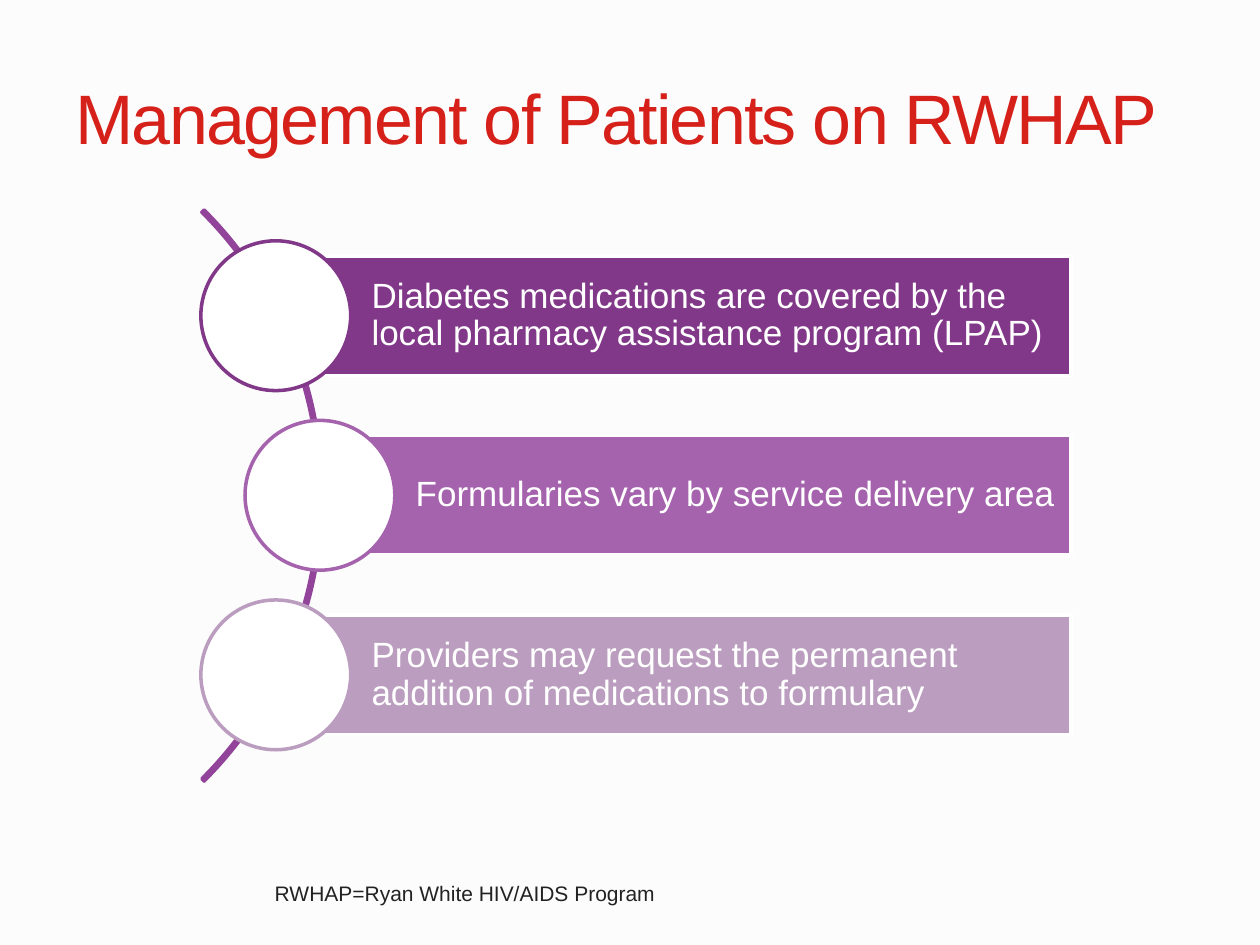
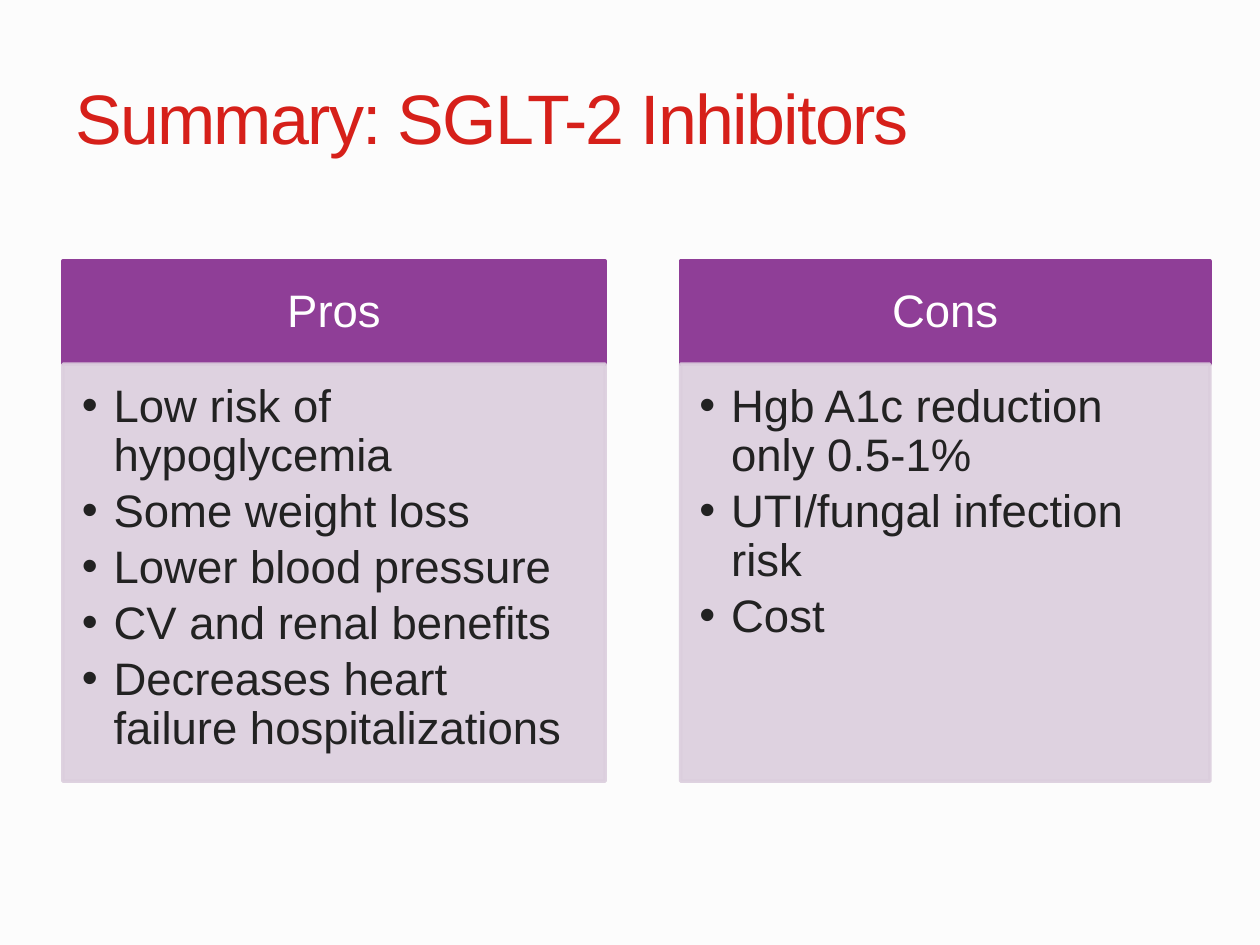
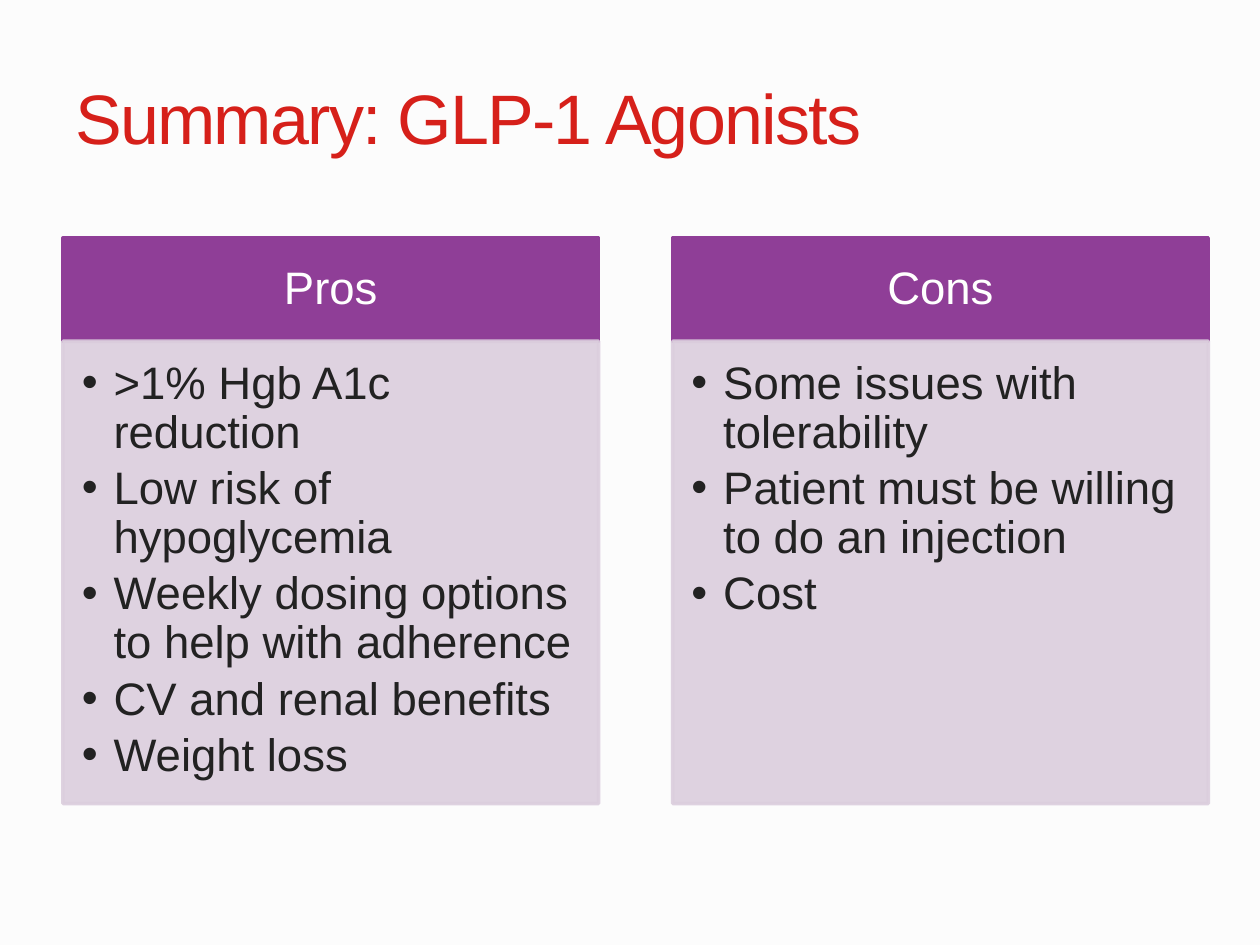
from lxml import etree
from pptx import Presentation
from pptx.dml.color import RGBColor
from pptx.enum.shapes import MSO_SHAPE as Shape
from pptx.enum.text import MSO_ANCHOR as Anchor, PP_ALIGN as Align
from pptx.oxml.ns import qn
from pptx.util import Cm, Pt

FONT = "Arial"
WHITE, INK, RED, PAPER = "FFFFFF", "222222", "D6201A", "FCFCFC"
PURPLE, LILAC = "8F3E97", "DBCEDD"
HEADER_HEIGHT = 2.08


def rgb(value):
    return RGBColor.from_string(value)


def apply(target, values):
    for name, value in values.items():
        setattr(target, name, value)


def add_alpha(element, percent):
    for color in element.iter(qn("a:srgbClr")):
        etree.SubElement(color, qn("a:alpha"), val=str(percent * 1000))


class SlideBuilder:
    def __init__(self):
        self.deck = Presentation()
        self.deck.slide_width, self.deck.slide_height = Cm(25.4), Cm(19.05)
        self.page = None

    def start_page(self, title):
        self.page = self.deck.slides.add_slide(self.deck.slide_layouts[6])
        background = self.page.background.fill
        background.solid()
        background.fore_color.rgb = rgb(PAPER)
        box = self.text_box((1.27, 0.76, 23.09, 3.18), [title], 40, RED,
                            anchor=Anchor.MIDDLE)
        span = box.text_frame.paragraphs[0].runs[0]
        span.font._element.set("spc", "-100")

    def shape(self, kind, place, line, fill=None, alpha=None):
        shape = self.page.shapes.add_shape(kind, *map(Cm, place))
        shape.shadow.inherit = False
        if fill:
            shape.fill.solid()
            shape.fill.fore_color.rgb = rgb(fill)
        else:
            shape.fill.background()
        shape.line.color.rgb = rgb(line)
        shape.line.width = Pt(2)
        if alpha:
            add_alpha(shape._element.spPr, alpha)
        return shape

    def text_box(self, place, lines, size, color, **style):
        box = self.page.shapes.add_textbox(*map(Cm, place))
        self.fill_text(box, lines, size, color, **style)
        return box

    def fill_text(self, box, lines, size, color, insets=(0.25, 0.13, 0.25, 0.13),
                  anchor=Anchor.TOP, align=Align.LEFT, spacing=1.0, bullet=False):
        frame = box.text_frame
        sides = ("margin_left", "margin_top", "margin_right", "margin_bottom")
        apply(frame, dict(zip(sides, map(Cm, insets))))
        apply(frame, {"word_wrap": True, "vertical_anchor": anchor})
        for index, line in enumerate(lines):
            para = frame.add_paragraph() if index else frame.paragraphs[0]
            apply(para, {"alignment": align, "line_spacing": spacing})
            if bullet:
                self.add_bullet(para)
            span = para.add_run()
            span.text = line
            apply(span.font, {"name": FONT, "size": Pt(size)})
            span.font.color.rgb = rgb(color)

    def add_bullet(self, para):
        para.space_after = Pt(4)
        properties = para._p.get_or_add_pPr()
        properties.set("marL", str(Cm(0.64)))
        properties.set("indent", str(-Cm(0.64)))
        etree.SubElement(properties, qn("a:buFont"), typeface=FONT)
        etree.SubElement(properties, qn("a:buChar"), char="•")

    def arc(self, place, start, end, thickness):
        arc = self.shape(Shape.BLOCK_ARC, place, "914499")
        for index, value in enumerate((start, end, thickness)):
            arc.adjustments[index] = value

    def circle_bar(self, left, top, text, color):
        right, height, diameter = 21.59, 2.41, 3.02
        bar = self.shape(Shape.RECTANGLE, (left, top, right - left, height), WHITE, color)
        self.fill_text(bar, [text], 20, WHITE, (1.93, 0.15, 0.15, 0.15),
                       Anchor.MIDDLE, spacing=0.9)
        circle_top = top + (height - diameter) / 2
        self.shape(Shape.OVAL, (left - diameter / 2, circle_top, diameter, diameter),
                   color, WHITE)

    def list_column(self, left, top, width, body_height, heading, items):
        header = self.shape(Shape.RECTANGLE, (left, top, width, HEADER_HEIGHT),
                            PURPLE, PURPLE)
        self.fill_text(header, [heading], 26, WHITE, (0.5, 0.3, 0.5, 0.3),
                       Anchor.MIDDLE, Align.CENTER, 0.9)
        body = self.shape(Shape.RECTANGLE, (left, top + HEADER_HEIGHT, width, body_height),
                          LILAC, LILAC, alpha=90)
        self.fill_text(body, items, 26, INK, (0.38, 0.38, 0.5, 0.58),
                       spacing=0.9, bullet=True)


def build_management(builder):
    builder.start_page("Management of Patients on RWHAP")
    builder.arc((-9.78, 1.85, 16.28, 16.28), 189, 27, 0.004)
    bars = [
        (5.56, "Diabetes medications are covered by the local pharmacy assistance program (LPAP)",
         "823889"),
        (6.45, "Formularies vary by service delivery area", "A562AD"),
        (5.56, "Providers may request the permanent addition of medications to formulary",
         "BB9EBF"),
    ]
    for row, (left, text, color) in enumerate(bars):
        builder.circle_bar(left, 5.16 + 3.62 * row, text, color)
    builder.text_box((1.63, 17.63, 15.49, 0.76), ["RWHAP=Ryan White HIV/AIDS Program"],
                     12, INK, align=Align.CENTER)


def build_summary(builder, title, top, body_height, columns):
    builder.start_page(title)
    for left, width, heading, items in columns:
        builder.list_column(left, top, width, body_height, heading, items)


def main():
    builder = SlideBuilder()
    build_management(builder)
    build_summary(builder, "Summary: SGLT-2 Inhibitors", 5.26, 8.41, [
        (1.27, 10.93, "Pros", [
            "Low risk of hypoglycemia",
            "Some weight loss",
            "Lower blood pressure",
            "CV and renal benefits",
            "Decreases heart failure hospitalizations",
        ]),
        (13.72, 10.67, "Cons", [
            "Hgb A1c reduction only 0.5-1%",
            "UTI/fungal infection risk",
            "Cost",
        ]),
    ])
    build_summary(builder, "Summary: GLP-1 Agonists", 4.8, 9.32, [
        (1.27, 10.8, "Pros", [
            ">1% Hgb A1c reduction",
            "Low risk of hypoglycemia",
            "Weekly dosing options to help with adherence",
            "CV and renal benefits",
            "Weight loss",
        ]),
        (13.56, 10.8, "Cons", [
            "Some issues with tolerability",
            "Patient must be willing to do an injection",
            "Cost",
        ]),
    ])
    builder.deck.save("out.pptx")


if __name__ == "__main__":
    main()
